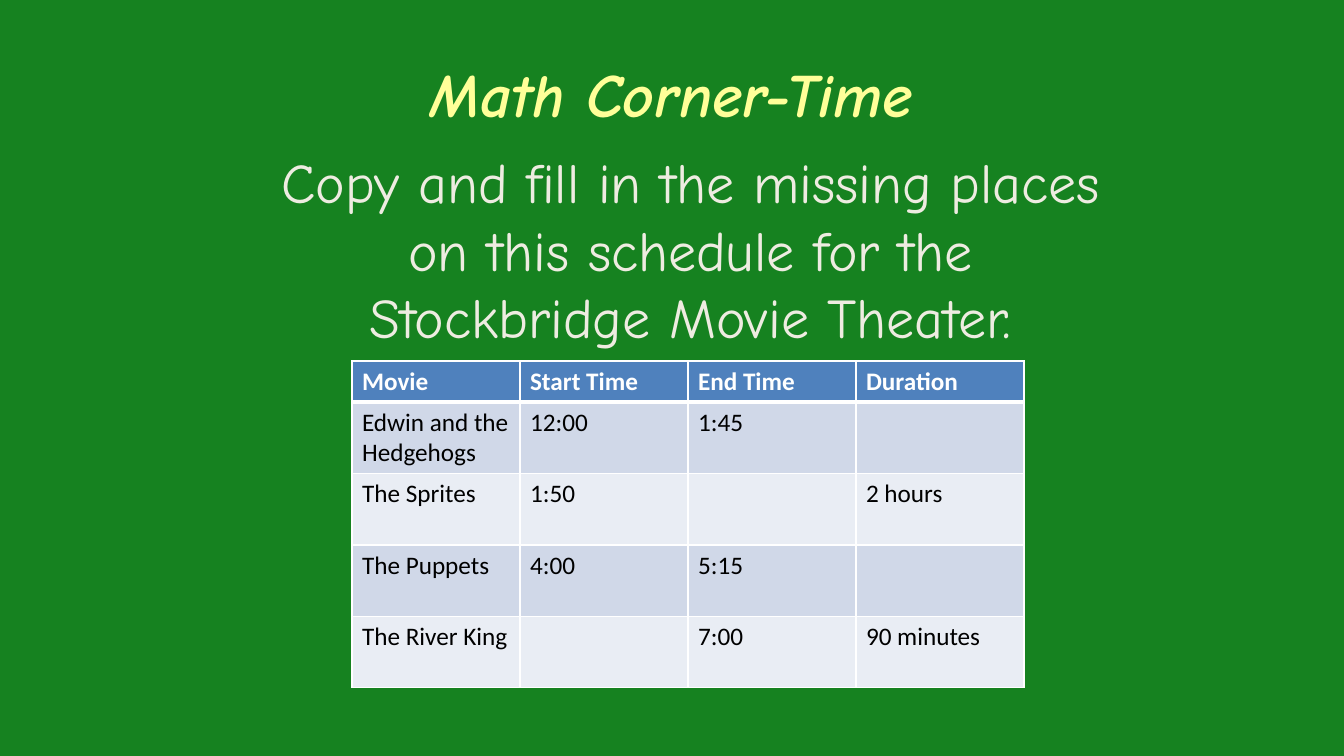
from lxml import etree
from pptx import Presentation
from pptx.dml.color import RGBColor
from pptx.enum.text import MSO_ANCHOR, PP_ALIGN
from pptx.oxml.ns import qn
from pptx.util import Pt

EMU_PER_PX = 914400 / 100.8
TITLE_ONLY = 5
CENTER, LEFT = PP_ALIGN.CENTER, PP_ALIGN.LEFT
MIDDLE, TOP = MSO_ANCHOR.MIDDLE, MSO_ANCHOR.TOP

GREEN, YELLOW, CREAM = "168220", "FFFF99", "EEECE1"
WHITE, BLACK = "FFFFFF", "000000"
HEADER_FILL = "4F81BD"
BAND_FILLS = ("E9EDF4", "D0D8E8")

TITLE_BOX = (101, 12, 1142, 162)
TASK_BOX = (219, 143, 907, 220)
TABLE_BOX = (352, 361, 672, 327)
TASK_INDENT = 36
HEADER_HEIGHT = 41

SCHEDULE = [
    ("Movie", "Start Time", "End Time", "Duration"),
    ("Edwin and the Hedgehogs", "12:00", "1:45", ""),
    ("The Sprites", "1:50", "", "2 hours"),
    ("The Puppets", "4:00", "5:15", ""),
    ("The River King", "", "7:00", "90 minutes"),
]


def px(length):
    return round(length * EMU_PER_PX)


def color(code):
    return RGBColor.from_string(code)


def place(shape, box):
    shape.left, shape.top, shape.width, shape.height = map(px, box)


def write(frame, text, font, size, code, align, bold=False, italic=False):
    frame.text = text
    para = frame.paragraphs[0]
    para.alignment = align
    para.space_before = Pt(0)
    for target in [para, *para.runs]:
        target.font.name = font
        target.font.size = Pt(size)
        target.font.bold = bold
        target.font.italic = italic
        target.font.color.rgb = color(code)
    return para


def add_title(page, box):
    title = page.shapes.title
    place(title, box)
    title.text_frame.vertical_anchor = MIDDLE
    write(title.text_frame, "Math Corner-Time", "Comic Neue", 44, YELLOW,
          CENTER, bold=True, italic=True)


def add_task(page, box):
    frame = page.shapes.add_textbox(*map(px, box)).text_frame
    frame.word_wrap = True
    frame.vertical_anchor = TOP
    para = write(frame, "Copy and fill in the missing places on this schedule "
                 "for the Stockbridge Movie Theater.", "Comic Neue", 40, CREAM, CENTER)
    para._p.get_or_add_pPr().set("marL", str(px(TASK_INDENT)))


def add_borders(cell, top, bottom):
    properties = cell._tc.get_or_add_tcPr()
    for side, width in (("L", 1), ("R", 1), ("T", top), ("B", bottom)):
        line = etree.SubElement(properties, qn(f"a:ln{side}"), w=str(Pt(width)))
        fill = etree.SubElement(line, qn("a:solidFill"))
        etree.SubElement(fill, qn("a:srgbClr"), val=WHITE)


def add_schedule(page, box):
    row_count, column_count = len(SCHEDULE), len(SCHEDULE[0])
    table = page.shapes.add_table(row_count, column_count, *map(px, box)).table
    width, height = box[2:]
    for column in table.columns:
        column.width = px(width / column_count)
    for index, row in enumerate(SCHEDULE):
        header = index == 0
        body_height = (height - HEADER_HEIGHT) / (row_count - 1)
        table.rows[index].height = px(HEADER_HEIGHT if header else body_height)
        for cell, text in zip(table.rows[index].cells, row):
            add_borders(cell, 3 if index == 1 else 1, 3 if header else 1)
            cell.fill.solid()
            cell.fill.fore_color.rgb = color(HEADER_FILL if header else BAND_FILLS[index % 2])
            write(cell.text_frame, text, "Calibri", 18, WHITE if header else BLACK,
                  LEFT, bold=header)


def main():
    deck = Presentation()
    deck.slide_width, deck.slide_height = px(1344), px(756)
    page = deck.slides.add_slide(deck.slide_layouts[TITLE_ONLY])
    page.background.fill.solid()
    page.background.fill.fore_color.rgb = color(GREEN)
    add_title(page, TITLE_BOX)
    add_task(page, TASK_BOX)
    add_schedule(page, TABLE_BOX)
    deck.save("out.pptx")


if __name__ == "__main__":
    main()
